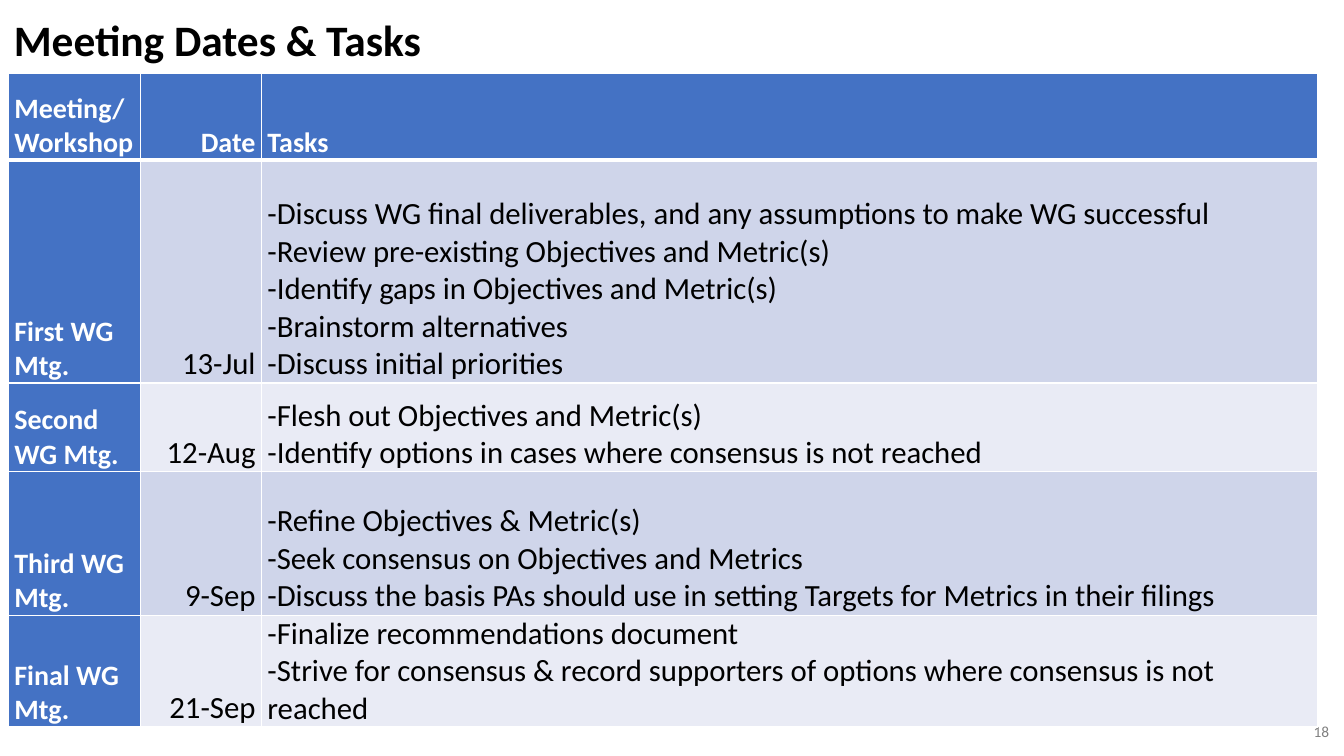
from dataclasses import dataclass

from lxml.etree import SubElement
from pptx import Presentation
from pptx.dml.color import RGBColor
from pptx.enum.text import MSO_ANCHOR, PP_ALIGN
from pptx.oxml.ns import qn
from pptx.slide import Slide
from pptx.table import Table, _Cell
from pptx.text.text import TextFrame
from pptx.util import Cm, Pt


@dataclass(frozen=True)
class Theme:
    font: str = "Calibri"
    accent: str = "4472C4"
    odd_band: str = "CFD5EA"
    even_band: str = "E9EBF5"
    light: str = "FFFFFF"
    dark: str = "000000"
    muted: str = "808080"
    title_size: float = 31
    heading_size: float = 20
    body_size: float = 22
    number_size: float = 11
    rule: float = 1
    header_rule: float = 3


@dataclass(frozen=True)
class Meeting:
    name: str
    date: str
    tasks: tuple[str, ...]
    height: float


THEME = Theme()
HEADINGS = ("Meeting/ Workshop", "Date", "Tasks")
HEADER_HEIGHT = 2.18
COLUMN_WIDTHS = (3.33, 3.05, 26.62)
ALIGNMENTS = (PP_ALIGN.LEFT, PP_ALIGN.RIGHT, PP_ALIGN.LEFT)
MEETINGS = (
    Meeting("First WG Mtg.", "13-Jul", (
        "-Discuss WG final deliverables, and any assumptions to make WG successful",
        "-Review pre-existing Objectives and Metric(s)",
        "-Identify gaps in Objectives and Metric(s)",
        "-Brainstorm alternatives",
        "-Discuss initial priorities",
    ), 5.61),
    Meeting("Second WG Mtg.", "12-Aug", (
        "-Flesh out Objectives and Metric(s)",
        "-Identify options in cases where consensus is not reached",
    ), 2.24),
    Meeting("Third WG Mtg.", "9-Sep", (
        "-Refine Objectives & Metric(s)",
        "-Seek consensus on Objectives and Metrics",
        "-Discuss the basis PAs should use in setting Targets for Metrics in their filings",
    ), 3.61),
    Meeting("Final WG Mtg.", "21-Sep", (
        "-Finalize recommendations document",
        "-Strive for consensus & record supporters of options where consensus is not reached",
    ), 2.82),
)


def write(frame: TextFrame, *lines: str, size: float, color: str, bold: bool = False,
          align: PP_ALIGN = PP_ALIGN.LEFT, space_after: float = 0,
          line_spacing: float = 1.0) -> None:
    frame.word_wrap = True
    for index, line in enumerate(lines):
        paragraph = frame.add_paragraph() if index else frame.paragraphs[0]
        paragraph.alignment = align
        paragraph.space_after = Pt(space_after)
        paragraph.line_spacing = line_spacing
        run = paragraph.add_run()
        run.text = line
        run.font.name = THEME.font
        run.font.size = Pt(size)
        run.font.bold = bold
        run.font.color.rgb = RGBColor.from_string(color)


def add_label(slide: Slide, left: float, top: float, width: float, height: float) -> TextFrame:
    frame = slide.shapes.add_textbox(Cm(left), Cm(top), Cm(width), Cm(height)).text_frame
    frame.vertical_anchor = MSO_ANCHOR.MIDDLE
    return frame


def add_borders(cell: _Cell, top: float, bottom: float) -> None:
    properties = cell._tc.get_or_add_tcPr()
    widths = {"L": THEME.rule, "R": THEME.rule, "T": top, "B": bottom}
    for side, width in widths.items():
        line = SubElement(properties, qn(f"a:ln{side}"), w=str(Pt(width)))
        fill = SubElement(line, qn("a:solidFill"))
        SubElement(fill, qn("a:srgbClr"), val=THEME.light)


def fill_cell(table: Table, row: int, column: int, lines: tuple[str, ...]) -> None:
    cell = table.cell(row, column)
    heading = row == 0 or column == 0
    band = THEME.odd_band if row % 2 else THEME.even_band
    add_borders(cell,
                top=THEME.header_rule if row == 1 else THEME.rule,
                bottom=THEME.header_rule if row == 0 else THEME.rule)
    cell.fill.solid()
    cell.fill.fore_color.rgb = RGBColor.from_string(THEME.accent if heading else band)
    cell.vertical_anchor = MSO_ANCHOR.BOTTOM
    cell.margin_left = cell.margin_right = Cm(0.15)
    cell.margin_top = cell.margin_bottom = Cm(0)
    write(cell.text_frame, *lines, bold=heading, align=ALIGNMENTS[column],
          size=THEME.heading_size if heading else THEME.body_size,
          color=THEME.light if heading else THEME.dark)


def add_schedule(slide: Slide) -> None:
    heights = (HEADER_HEIGHT, *(meeting.height for meeting in MEETINGS))
    schedule = slide.shapes.add_table(
        len(heights), len(COLUMN_WIDTHS), Cm(0.21), Cm(1.86),
        Cm(sum(COLUMN_WIDTHS)), Cm(sum(heights))).table
    for column, width in zip(schedule.columns, COLUMN_WIDTHS):
        column.width = Cm(width)
    for row, height in zip(schedule.rows, heights):
        row.height = Cm(height)
    contents = [tuple((heading,) for heading in HEADINGS)]
    contents += [((meeting.name,), (meeting.date,), meeting.tasks) for meeting in MEETINGS]
    for row, entries in enumerate(contents):
        for column, lines in enumerate(entries):
            fill_cell(schedule, row, column, lines)


def main() -> None:
    presentation = Presentation()
    presentation.slide_width = Cm(33.87)
    presentation.slide_height = Cm(19.05)
    slide = presentation.slides.add_slide(presentation.slide_layouts[6])
    page_number = add_label(slide, 32.51, 17.93, 1.24, 1.02)
    write(page_number, "18", size=THEME.number_size, color=THEME.muted,
          align=PP_ALIGN.RIGHT, space_after=6)
    add_schedule(slide)
    title = add_label(slide, 0.1, 0, 27.89, 2.13)
    write(title, "Meeting Dates & Tasks", size=THEME.title_size, color=THEME.dark,
          bold=True, line_spacing=0.9)
    presentation.save("out.pptx")


if __name__ == "__main__":
    main()
